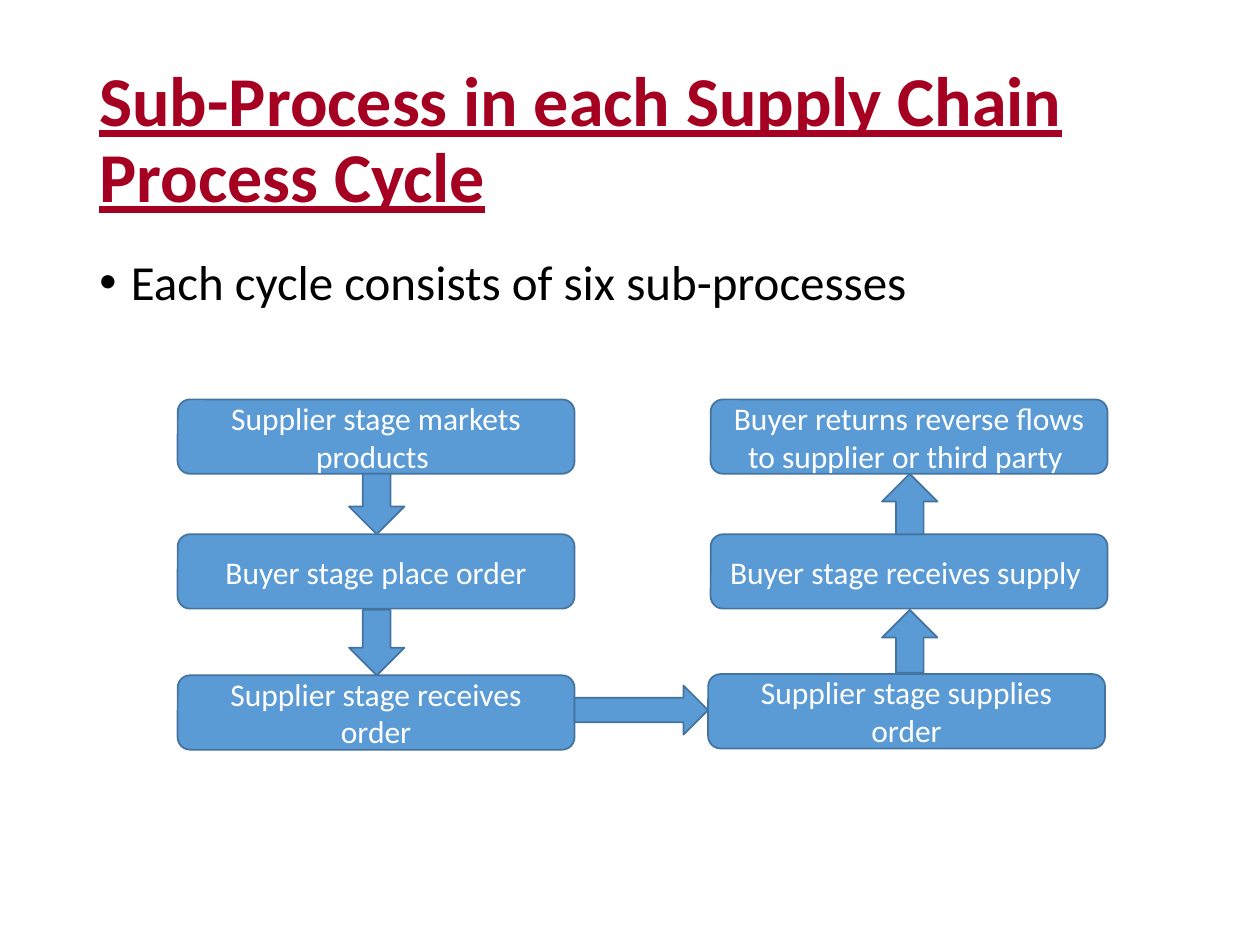
"""Build the slide on the sub-processes in each supply chain process cycle."""
from lxml.etree import SubElement
from pptx import Presentation
from pptx.dml.color import RGBColor
from pptx.enum.shapes import MSO_SHAPE as Shape
from pptx.enum.text import MSO_ANCHOR as Anchor, PP_ALIGN as Align
from pptx.oxml.ns import qn
from pptx.util import Inches, Pt


def color(value):
    return RGBColor.from_string(value)


def write(holder, text, anchor, font_format, paragraph_format):
    frame = holder.text_frame
    frame.word_wrap = True
    frame.vertical_anchor = anchor
    paragraph = frame.paragraphs[0]
    run = paragraph.add_run()
    run.text = text
    run.font.color.rgb = color(font_format["color"])
    for key, value in font_format.items():
        if key != "color":
            setattr(run.font, key, value)
    for key, value in paragraph_format.items():
        setattr(paragraph, key, value)
    return paragraph


deck = Presentation()
deck.slide_width, deck.slide_height = Inches(10), Inches(7.5)
slide = deck.slides.add_slide(deck.slide_layouts[6])

title_font = {"name": "Calibri", "size": Pt(40), "bold": True, "underline": True, "color": "A50021"}
statement_font = {"name": "Calibri", "size": Pt(28), "color": "000000"}
step_font = {"name": "Calibri", "size": Pt(18), "color": "FFFFFF"}

title = slide.shapes.add_textbox(Inches(0.69), Inches(0.4), Inches(8.62), Inches(1.45))
write(title, "Sub-Process in each Supply Chain Process Cycle", Anchor.MIDDLE,
      title_font, {"line_spacing": 0.9})

statement = slide.shapes.add_textbox(Inches(0.69), Inches(2), Inches(8.62), Inches(4.76))
bullet_line = write(statement, "Each cycle consists of six sub-processes", Anchor.TOP,
                    statement_font, {"line_spacing": 0.9, "space_before": Pt(10)})
bullet_format = bullet_line._p.get_or_add_pPr()
bullet_format.set("marL", str(Inches(0.25)))
bullet_format.set("indent", str(-Inches(0.25)))
SubElement(bullet_format, qn("a:buFont"), typeface="Arial")
SubElement(bullet_format, qn("a:buChar"), char="•")

step_width, step_height = 3.15, 0.59
steps = [
    ("Supplier stage markets products ", 1.41, 3.17),
    ("Buyer stage place order", 1.41, 4.24),
    ("Supplier stage receives order", 1.41, 5.36),
    ("Supplier stage supplies order", 5.62, 5.35),
    ("Buyer stage receives supply ", 5.64, 4.24),
    ("Buyer returns reverse flows to supplier or third party ", 5.64, 3.17),
]
flow_arrows = [
    (Shape.DOWN_ARROW, 2.77, 3.76, 0.44, 0.48, 0),
    (Shape.DOWN_ARROW, 2.77, 4.84, 0.44, 0.52, 0),
    (Shape.DOWN_ARROW, 7, 4.84, 0.44, 0.5, 180),
    (Shape.DOWN_ARROW, 7, 3.76, 0.44, 0.48, 180),
    (Shape.RIGHT_ARROW, 4.56, 5.44, 1.06, 0.39, 0),
]
parts = [(Shape.ROUNDED_RECTANGLE, left, top, step_width, step_height, 0, text)
         for text, left, top in steps]
parts += [(*arrow, "") for arrow in flow_arrows]

for kind, left, top, width, height, rotation, text in parts:
    part = slide.shapes.add_shape(kind, Inches(left), Inches(top), Inches(width), Inches(height))
    part.rotation = rotation
    part.shadow.inherit = False
    part.fill.solid()
    part.fill.fore_color.rgb = color("5B9BD5")
    part.line.color.rgb = color("43739E")
    part.line.width = Pt(1)
    if text:
        write(part, text, Anchor.MIDDLE, step_font, {"alignment": Align.CENTER})

deck.save("out.pptx")
